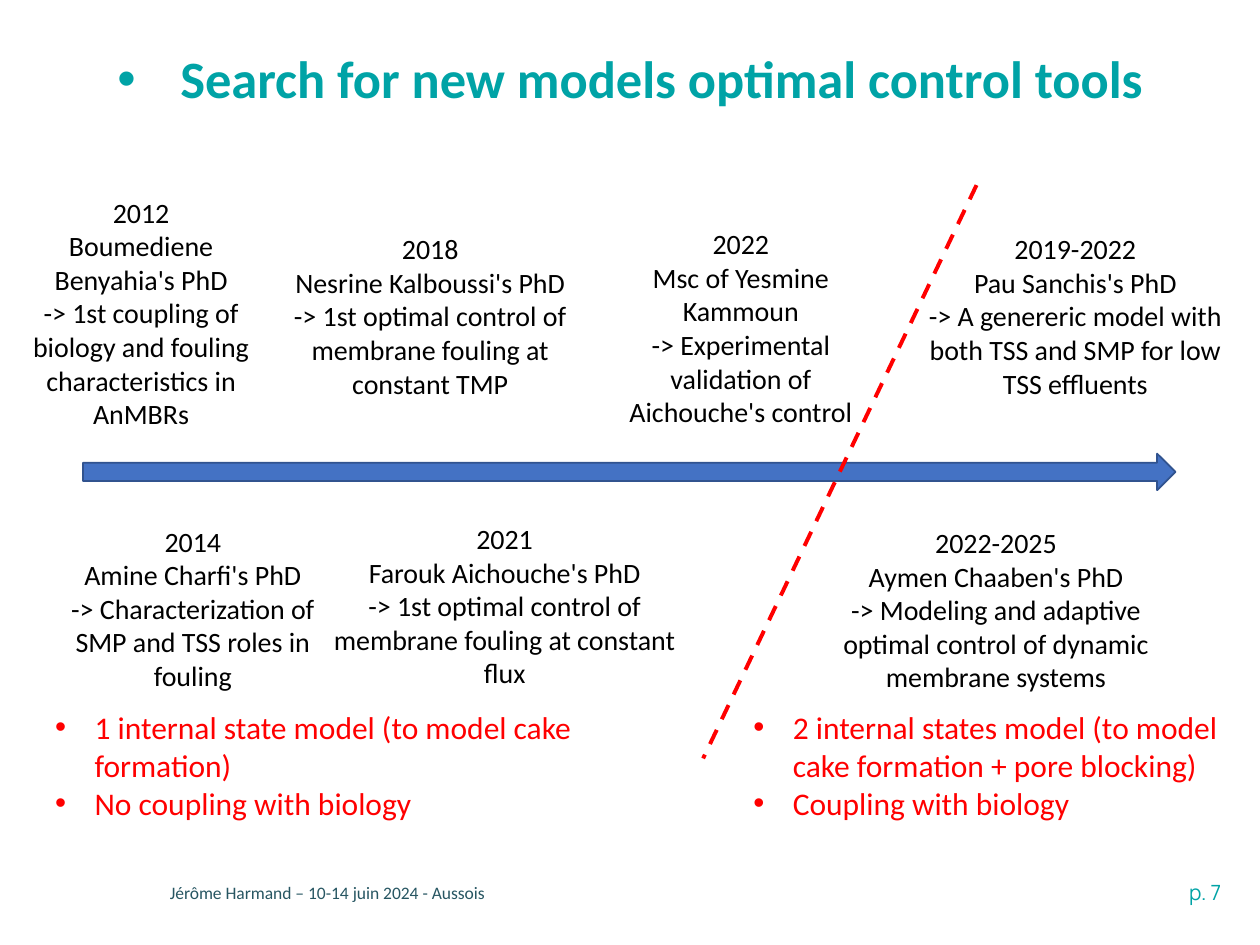
from lxml.etree import SubElement
from pptx import Presentation
from pptx.dml.color import RGBColor
from pptx.enum.dml import MSO_LINE
from pptx.enum.shapes import MSO_CONNECTOR, MSO_SHAPE
from pptx.enum.text import MSO_ANCHOR, PP_ALIGN
from pptx.oxml.ns import qn
from pptx.util import Pt

TEAL, RED, BLACK = "00A3A6", "FF0000", "000000"
TITLE = "Search for new models optimal control tools"
FOOTER = "Jérôme Harmand – 10-14 juin 2024 - Aussois"
PAGE = "p. 7"
MILESTONES = [
    ((6.5, 108, 148.3, 143.3), "2012", "Boumediene Benyahia's PhD",
     "-> 1st coupling of biology and fouling characteristics in AnMBRs"),
    ((24.5, 296, 171.4, 104.4), "2014", "Amine Charfi's PhD",
     "-> Characterization of SMP and TSS roles in fouling"),
    ((149, 128.9, 193.7, 104.4), "2018", "Nesrine Kalboussi's PhD",
     "-> 1st optimal control of membrane fouling at constant TMP"),
    ((172.8, 294.5, 231.1, 104.4), "2021", "Farouk Aichouche's PhD",
     "-> 1st optimal control of membrane fouling at constant flux"),
    ((342.7, 126, 161.3, 123.8), "2022", "Msc of Yesmine Kammoun",
     "-> Experimental validation of Aichouche's control"),
    ((518.4, 128.9, 192.2, 104.4), "2019-2022", "Pau Sanchis's PhD",
     "-> A genereric model with both TSS and SMP for low TSS effluents"),
    ((453.6, 296.8, 231.1, 104.4), "2022-2025", "Aymen Chaaben's PhD",
     "-> Modeling and adaptive optimal control of dynamic membrane systems"),
]
FEATURES = [
    ((24.5, 401, 341.3, 72.7), "1 internal state model (to model cake formation)",
     "No coupling with biology"),
    ((423.4, 401, 286.6, 72.7),
     "2 internal states model (to model cake formation + pore blocking)",
     "Coupling with biology"),
]


def rgb(value):
    """Return the colour of a hex string."""
    return RGBColor.from_string(value)


def add_bullet(p, color, indent):
    """Give a paragraph a hanging round bullet."""
    pPr = p._p.get_or_add_pPr()
    pPr.set("marL", str(Pt(indent)))
    pPr.set("indent", str(-Pt(indent)))
    SubElement(SubElement(pPr, qn("a:buClr")), qn("a:srgbClr"), val=color)
    SubElement(pPr, qn("a:buFont"), typeface="Arial")
    SubElement(pPr, qn("a:buChar"), char="•")


def add_text(slide, box, lines, size, color, align=PP_ALIGN.LEFT, font="Calibri",
             indent=0, bold=False):
    """Add a wrapped text box with one paragraph per line and return its frame."""
    tf = slide.shapes.add_textbox(*map(Pt, box)).text_frame
    tf.word_wrap = True
    tf.text = "\n".join(lines)
    for p in tf.paragraphs:
        p.alignment = align
        if indent:
            add_bullet(p, color, indent)
        for r in p.runs:
            r.font.name, r.font.size, r.font.bold = font, Pt(size), bold
            r.font.color.rgb = rgb(color)
    return tf


def add_timeline(slide):
    """Add the block arrow that carries the milestones."""
    sp = slide.shapes.add_shape(MSO_SHAPE.RIGHT_ARROW, *map(Pt, (47.5, 259.2, 624.2, 20.9)))
    sp.shadow.inherit = False
    sp.fill.solid()
    sp.fill.fore_color.rgb = rgb("4472C4")
    sp.line.color.rgb = rgb("31538F")
    sp.line.width = Pt(1)


def add_divider(slide):
    """Add the dashed line between the two model families."""
    line = slide.shapes.add_connector(MSO_CONNECTOR.STRAIGHT, *map(Pt, (558, 105.8, 401.8, 433.4)))
    line.line.color.rgb = rgb(RED)
    line.line.width = Pt(2.25)
    line.line.dash_style = MSO_LINE.DASH
    SubElement(line._element.spPr, qn("a:effectLst"))


def main():
    """Build the slide and save it."""
    prs = Presentation()
    prs.slide_width, prs.slide_height = Pt(720), Pt(540)
    slide = prs.slides.add_slide(prs.slide_layouts[6])

    add_text(slide, (540.7, 499, 164.2, 21.6), [PAGE], 12, TEAL, PP_ALIGN.RIGHT, "Manrope")
    add_text(slide, (90, 500.4, 528.5, 19.4), [FOOTER], 10, "275662")
    tf = add_text(slide, (67, 11.5, 603.4, 69.8), [TITLE], 30, TEAL, indent=36, bold=True)
    tf.margin_left = 0
    tf.vertical_anchor = MSO_ANCHOR.MIDDLE
    tf.paragraphs[0].line_spacing = 0.9

    add_timeline(slide)
    for box, *lines in MILESTONES:
        add_text(slide, box, lines, 16, BLACK, PP_ALIGN.CENTER)
    add_divider(slide)
    for box, *lines in FEATURES:
        add_text(slide, box, lines, 18, RED, indent=22.5)

    prs.save("out.pptx")


if __name__ == "__main__":
    main()
